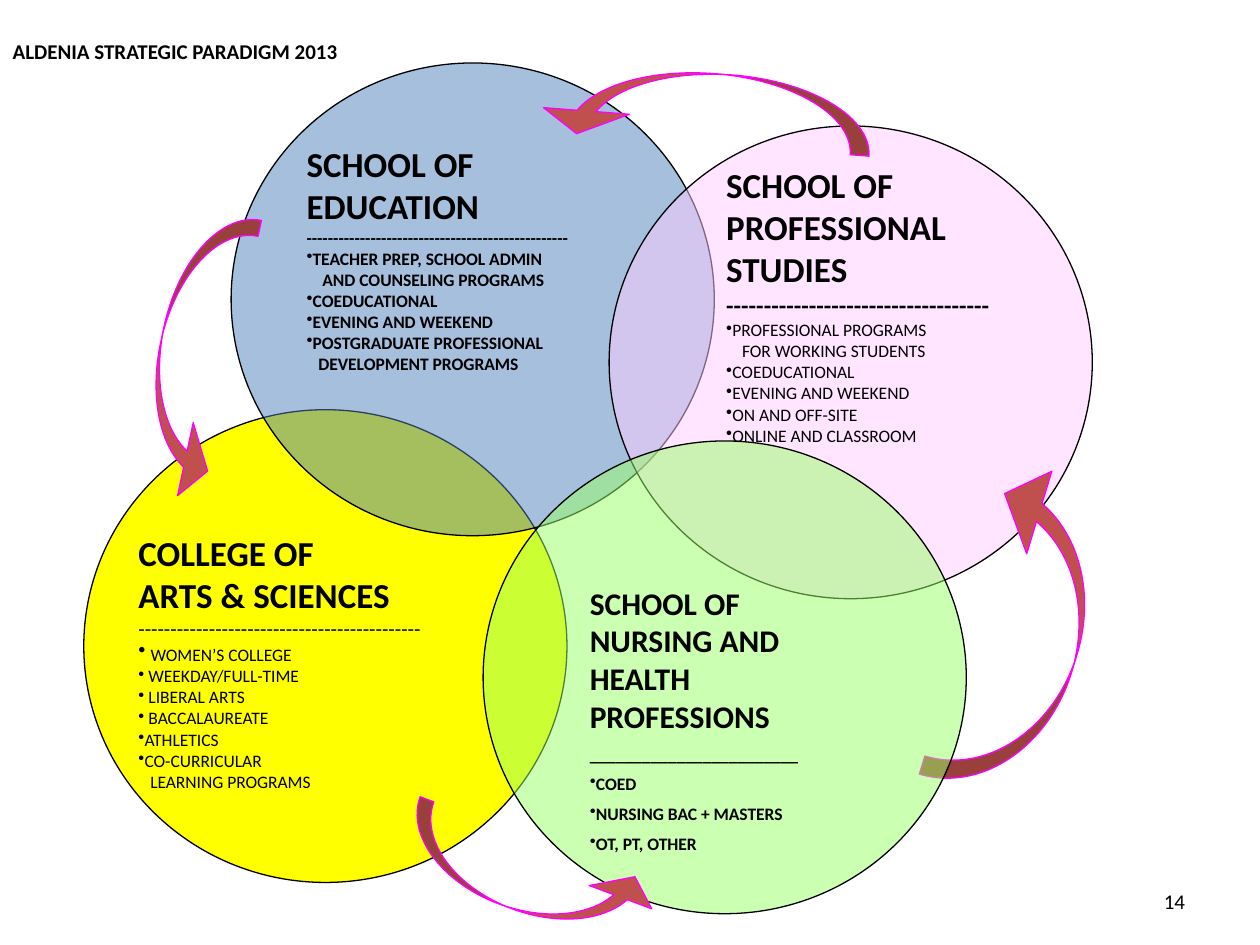
"""Build the slide of four overlapping schools linked by curved arrows."""
from dataclasses import dataclass

from lxml import etree
from pptx import Presentation
from pptx.dml.color import RGBColor
from pptx.enum import shapes, text
from pptx.oxml.ns import qn
from pptx.util import Cm, Pt


@dataclass(frozen=True)
class Theme:
    font: str = "Calibri"
    ink: str = "000000"
    arts: str = "FFFF00"
    education: str = "4F81BD"
    professional: str = "FFCCFF"
    nursing: str = "99FF66"
    arrow: str = "C0504D"
    arrow_edge: str = "FF00FF"
    line: float = 0.75
    heading: int = 20
    small_heading: int = 18
    wide_rule: int = 14
    label: int = 12
    body: int = 10


@dataclass(frozen=True)
class Box:
    left: float
    top: float
    width: float
    height: float

    def lengths(self) -> tuple:
        return tuple(Cm(side) for side in (self.left, self.top, self.width, self.height))


@dataclass(frozen=True)
class Line:
    words: str
    size: int
    bold: bool = True
    bullet: bool = False
    indent: float = 0
    lead: str = ""


@dataclass(frozen=True)
class Circle:
    left: float
    top: float
    fill: str
    alpha: int = 50


@dataclass(frozen=True)
class Arrow:
    box: Box
    rotation: float
    bends: tuple


@dataclass(frozen=True)
class Caption:
    box: Box
    lines: tuple
    gap: float = 0


THEME = Theme()
CIRCLE_WIDTH, CIRCLE_HEIGHT = 9.74, 9.53


def headings(*words: str, size: int = THEME.heading) -> tuple:
    return tuple(Line(word, size) for word in words)


def bullets(*words: str, bold: bool = True) -> tuple:
    return tuple(Line(word, THEME.body, bold, bullet=True) for word in words)


def continued(words: str, indent: float, bold: bool = True) -> Line:
    return Line(words, THEME.body, bold, indent=indent)


ARTS = (
    *headings("COLLEGE OF", "ARTS & SCIENCES"),
    Line("-" * 44, THEME.label, False),
    Line("WOMEN’S COLLEGE", THEME.body, False, bullet=True, lead=" "),
    *bullets(" WEEKDAY/FULL-TIME", " LIBERAL ARTS", " BACCALAUREATE",
             "ATHLETICS", "CO-CURRICULAR", bold=False),
    continued("LEARNING PROGRAMS", 0.24, False),
)
EDUCATION = (
    *headings("SCHOOL OF", "EDUCATION"),
    Line("-" * 49, THEME.body),
    *bullets("TEACHER PREP, SCHOOL ADMIN"),
    continued("AND COUNSELING PROGRAMS", 0.32),
    *bullets("COEDUCATIONAL", "EVENING AND WEEKEND", "POSTGRADUATE PROFESSIONAL"),
    continued("DEVELOPMENT PROGRAMS", 0.24),
)
PROFESSIONAL = (
    *headings("SCHOOL OF", "PROFESSIONAL", "STUDIES"),
    Line("-" * 35, THEME.wide_rule),
    *bullets("PROFESSIONAL PROGRAMS", bold=False),
    continued("FOR WORKING STUDENTS", 0.32, False),
    *bullets("COEDUCATIONAL", "EVENING AND WEEKEND", "ON AND OFF-SITE",
             "ONLINE AND CLASSROOM", bold=False),
)
NURSING = (
    *headings("SCHOOL OF NURSING AND HEALTH PROFESSIONS", size=THEME.small_heading),
    Line("_" * 24, THEME.body),
    *bullets("COED", "NURSING BAC + MASTERS", "OT, PT, OTHER"),
)
DIAGRAM = (
    Circle(1.69, 8.26, THEME.arts, 100),
    Circle(4.66, 1.27, THEME.education),
    Caption(Box(2.54, 10.58, 6.96, 5.51), ARTS),
    Caption(Box(5.93, 2.75, 6.48, 5.77), EDUCATION),
    Circle(12.28, 2.54, THEME.professional),
    Caption(Box(14.39, 3.18, 6.56, 6.78), PROFESSIONAL),
    Arrow(Box(0.97, 6.45, 5.92, 1.47), 102.1, (0.223, 1.023, 0.333)),
    Arrow(Box(17.25, 11.53, 6.78, 2.34), 286.9, (0.162, 0.744, 0.333)),
    Arrow(Box(10.8, 1.47, 6.78, 1.42), 184.4, (0.267, 1.224, 0.333)),
    Circle(9.74, 8.89, THEME.nursing),
    Caption(Box(11.64, 11.64, 5.29, 5.84), NURSING, gap=5),
    Arrow(Box(8.05, 16.94, 5.29, 1.47), 20.4, (0.199, 0.914, 0.333)),
)


def paint(shape, fill: str, edge: str) -> None:
    shape.shadow.inherit = False
    shape.fill.solid()
    shape.fill.fore_color.rgb = RGBColor.from_string(fill)
    shape.line.color.rgb = RGBColor.from_string(edge)
    shape.line.width = Pt(THEME.line)


def draw_circle(slide, circle: Circle) -> None:
    box = Box(circle.left, circle.top, CIRCLE_WIDTH, CIRCLE_HEIGHT)
    oval = slide.shapes.add_shape(shapes.MSO_SHAPE.OVAL, *box.lengths())
    paint(oval, circle.fill, THEME.ink)
    if circle.alpha < 100:
        colour = oval.fill._xPr.find(qn("a:solidFill"))[0]
        etree.SubElement(colour, qn("a:alpha"), val=str(circle.alpha * 1000))


def draw_arrow(slide, arrow: Arrow) -> None:
    curve = slide.shapes.add_shape(shapes.MSO_SHAPE.CURVED_UP_ARROW, *arrow.box.lengths())
    paint(curve, THEME.arrow, THEME.arrow_edge)
    curve.rotation = arrow.rotation
    for index, bend in enumerate(arrow.bends):
        curve.adjustments[index] = bend


def write_line(paragraph, line: Line, gap: float = 0) -> None:
    paragraph.space_before = Pt(gap)
    properties = paragraph._p.get_or_add_pPr()
    properties.set("marL", str(Cm(line.indent)))
    properties.set("indent", "0")
    if line.bullet:
        etree.SubElement(properties, qn("a:buChar"), char="•")
    font = paragraph.font
    font.name, font.bold = THEME.font, line.bold
    font.color.rgb = RGBColor.from_string(THEME.ink)
    if line.lead:
        lead = paragraph.add_run()
        lead.text, lead.font.size = line.lead, Pt(THEME.label)
        words = paragraph.add_run()
        words.text, words.font.size = line.words, Pt(line.size)
    else:
        font.size = Pt(line.size)
        paragraph.add_run().text = line.words


def draw_caption(slide, caption: Caption) -> None:
    frame = slide.shapes.add_textbox(*caption.box.lengths()).text_frame
    frame.word_wrap = True
    for index, line in enumerate(caption.lines):
        paragraph = frame.add_paragraph() if index else frame.paragraphs[0]
        write_line(paragraph, line, caption.gap if index else 0)


def draw_title(slide, words: str, box: Box) -> None:
    title = slide.shapes.title
    title.left, title.top, title.width, title.height = box.lengths()
    title.text_frame.vertical_anchor = text.MSO_ANCHOR.TOP
    paragraph = title.text_frame.paragraphs[0]
    paragraph.alignment = text.PP_ALIGN.LEFT
    write_line(paragraph, Line(words, THEME.label))


def draw_page_number(slide, number: str, box: Box) -> None:
    frame = slide.shapes.add_textbox(*box.lengths()).text_frame
    frame.word_wrap = True
    frame.vertical_anchor = text.MSO_ANCHOR.MIDDLE
    frame.paragraphs[0].alignment = text.PP_ALIGN.RIGHT
    write_line(frame.paragraphs[0], Line(number, THEME.label, False))


def main() -> None:
    deck = Presentation()
    deck.slide_width, deck.slide_height = Cm(25.4), Cm(19.05)
    slide = deck.slides.add_slide(deck.slide_layouts[5])
    draw_title(slide, "ALDENIA STRATEGIC PARADIGM 2013", Box(0, 0.64, 25.4, 0.76))
    painters = {Circle: draw_circle, Arrow: draw_arrow, Caption: draw_caption}
    for part in DIAGRAM:
        painters[type(part)](slide, part)
    draw_page_number(slide, "14", Box(18.21, 17.65, 5.93, 1.02))
    deck.save("out.pptx")


if __name__ == "__main__":
    main()
